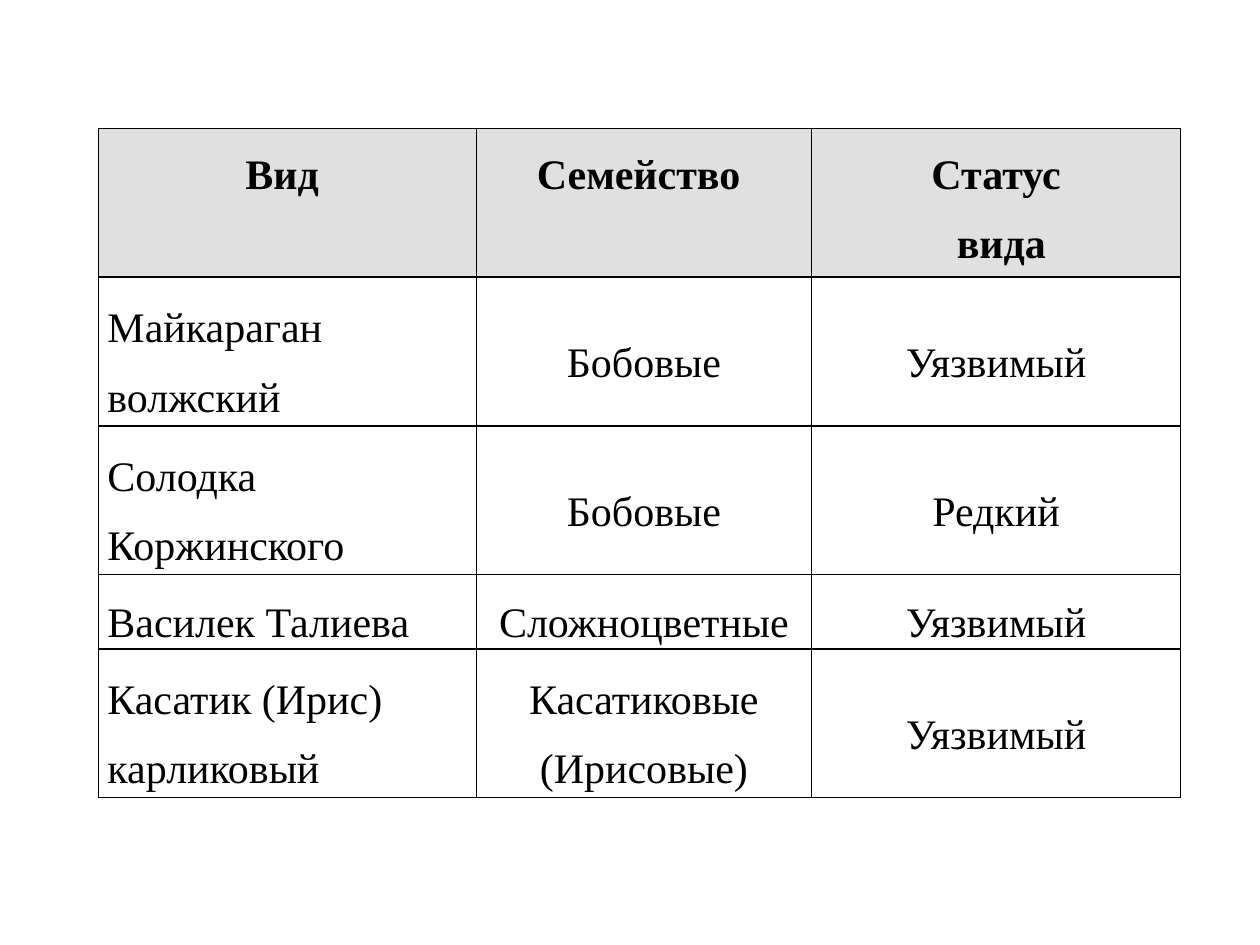
import pptx
import pptx.dml.color
import pptx.enum.text
import pptx.oxml
import pptx.oxml.ns
import pptx.util

Pt = pptx.util.Pt
ALIGN = pptx.enum.text.PP_ALIGN
ANCHOR = pptx.enum.text.MSO_ANCHOR

HEADER = ["Вид ", "Семейство ", "Статус\n вида"]
SPECIES = [
    ["Майкараган\nволжский", "Бобовые", "Уязвимый"],
    ["Солодка\nКоржинского", "Бобовые", "Редкий"],
    ["Василек Талиева", "Сложноцветные", "Уязвимый"],
    ["Касатик (Ирис)\nкарликовый", "Касатиковые (Ирисовые)", "Уязвимый"],
]
COLUMN_WIDTHS = [216, 191.5, 211]
LINE_HEIGHT = 42.5
ROW_LINES = [2, 2, 2, 1, 2]


def rgb(color):
    return pptx.dml.color.RGBColor.from_string(color)


def write(tf, text, size=24, font="Times New Roman", color="000000",
          bold=False, align=ALIGN.LEFT, spacing=1.5):
    for i, line in enumerate(text.split("\n")):
        p = tf.add_paragraph() if i else tf.paragraphs[0]
        p.alignment = align
        p.line_spacing = spacing
        r = p.add_run()
        r.text = line
        r.font.size = Pt(size)
        r.font.name = font
        r.font.bold = bold
        r.font.color.rgb = rgb(color)


class Deck:
    """Holds the table style and the current slide."""

    header_fill = "E0E0E0"
    border = "000000"
    border_width = 1
    inset = 5.2

    def __init__(self, prs):
        self.s = prs.slides.add_slide(prs.slide_layouts[6])

    def borders(self, cell):
        tcPr = cell._tc.get_or_add_tcPr()
        for side in ("lnL", "lnR", "lnT", "lnB"):
            tcPr.append(pptx.oxml.parse_xml(
                f'<a:{side} {pptx.oxml.ns.nsdecls("a")} w="{Pt(self.border_width)}">'
                f'<a:solidFill><a:srgbClr val="{self.border}"/></a:solidFill></a:{side}>'))

    def cell(self, cell, text, header, align):
        cell.margin_left = cell.margin_right = Pt(self.inset)
        cell.margin_top = cell.margin_bottom = 0
        cell.vertical_anchor = ANCHOR.TOP if header else ANCHOR.MIDDLE
        self.borders(cell)
        if header:
            cell.fill.solid()
            cell.fill.fore_color.rgb = rgb(self.header_fill)
        else:
            cell.fill.background()
        write(cell.text_frame, text, bold=header, align=align)

    def table(self, left, top, widths, heights, rows):
        sp = self.s.shapes.add_table(len(rows), len(widths), Pt(left), Pt(top),
                                     Pt(sum(widths)), Pt(sum(heights)))
        table = sp.table
        table.horz_banding = False
        for column, width in zip(table.columns, widths):
            column.width = Pt(width)
        for i, (row, height) in enumerate(zip(rows, heights)):
            table.rows[i].height = Pt(height)
            for j, text in enumerate(row):
                align = ALIGN.LEFT if i and not j else ALIGN.CENTER
                self.cell(table.cell(i, j), text, header=i == 0, align=align)


def main():
    prs = pptx.Presentation()
    prs.slide_width, prs.slide_height = Pt(720), Pt(540)
    heights = [LINE_HEIGHT * lines for lines in ROW_LINES]
    Deck(prs).table(56.2, 73.4, COLUMN_WIDTHS, heights, [HEADER] + SPECIES)
    prs.save("out.pptx")


if __name__ == "__main__":
    main()
